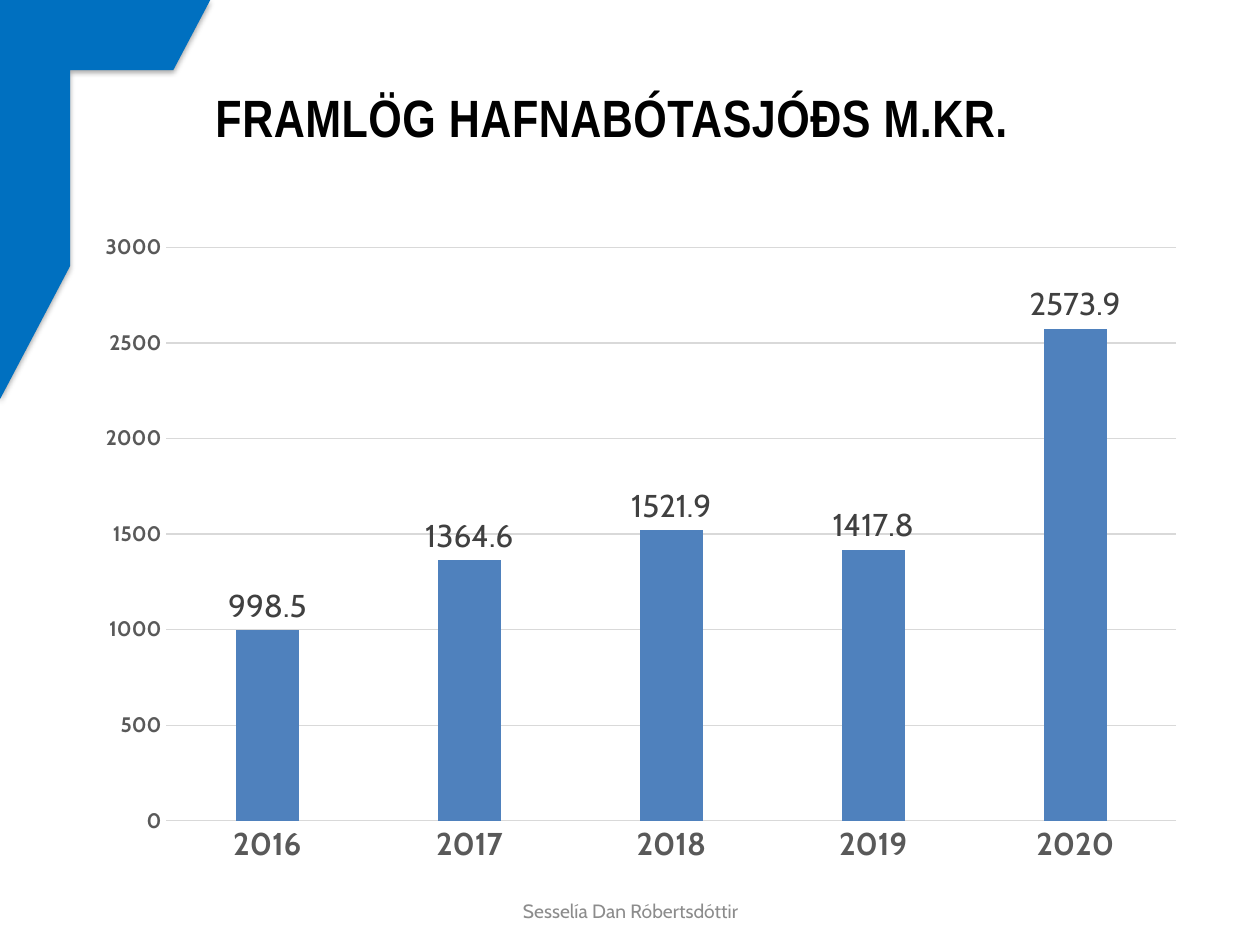
"""Build a slide with a column chart of yearly harbour fund contributions."""
import lxml.etree
import pptx
import pptx.chart.data
import pptx.dml.color
import pptx.enum.chart
import pptx.enum.shapes
import pptx.enum.text
import pptx.oxml.ns
import pptx.util

Cm = pptx.util.Cm
Pt = pptx.util.Pt
ALIGN = pptx.enum.text.PP_ALIGN


def colour(value):
    return pptx.dml.color.RGBColor.from_string(value)


def format_font(font, name, size, shade, bold=False):
    font.name = name
    font.size = Pt(size)
    font.bold = bold
    font.color.rgb = colour(shade)


def write_text(box, text, align=ALIGN.LEFT, spacing=0, space_after=0, **style):
    frame = box.text_frame
    frame.word_wrap = True
    frame.auto_size = pptx.enum.text.MSO_AUTO_SIZE.NONE
    frame.vertical_anchor = pptx.enum.text.MSO_ANCHOR.MIDDLE
    para = frame.paragraphs[0]
    para.alignment = align
    para.space_after = Pt(space_after)
    span = para.add_run()
    span.text = text
    format_font(span.font, **style)
    if spacing:
        span.font._element.set("spc", str(round(spacing * 100)))


class SlideBuilder:
    heading_font = "Arial Narrow"
    body_font = "Cabin"
    frame_fill = "0070C0"
    bar_fill = "4F81BD"
    grid_line = "D9D9D9"
    axis_text = "595959"

    def __init__(self, deck):
        self.page = deck.slides.add_slide(deck.slide_layouts[5])

    def corner(self, width, height):
        shape = self.page.shapes.add_shape(
            pptx.enum.shapes.MSO_SHAPE.HALF_FRAME, 0, 0, Cm(width), Cm(height))
        shape.fill.solid()
        shape.fill.fore_color.rgb = colour(self.frame_fill)
        shape.line.fill.background()
        shape.shadow.inherit = False
        effects = shape._element.spPr.find(pptx.oxml.ns.qn("a:effectLst"))
        shadow = lxml.etree.SubElement(
            effects, pptx.oxml.ns.qn("a:outerShdw"), blurRad=str(Pt(3.1)),
            dist=str(Pt(1.8)), dir="5400000", rotWithShape="0")
        shade = lxml.etree.SubElement(shadow, pptx.oxml.ns.qn("a:srgbClr"), val="000000")
        lxml.etree.SubElement(shade, pptx.oxml.ns.qn("a:alpha"), val="35000")

    def title(self, text, left, top, width, height):
        box = self.page.shapes.title
        box.left, box.top, box.width, box.height = map(Cm, (left, top, width, height))
        write_text(box, text, spacing=0.3, name=self.heading_font, size=30,
                   shade="000000", bold=True)

    def credit(self, text, left, top, width, height):
        box = self.page.shapes.add_textbox(*map(Cm, (left, top, width, height)))
        write_text(box, text, align=ALIGN.CENTER, space_after=6,
                   name=self.body_font, size=11, shade="8C8C8C")

    def axis(self, axis, size):
        axis.major_tick_mark = pptx.enum.chart.XL_TICK_MARK.NONE
        axis.minor_tick_mark = pptx.enum.chart.XL_TICK_MARK.NONE
        format_font(axis.tick_labels.font, self.body_font, size, self.axis_text, True)

    def rule(self, line):
        line.color.rgb = colour(self.grid_line)
        line.width = Pt(0.75)

    def column_chart(self, values, left, top, width, height):
        data = pptx.chart.data.CategoryChartData()
        data.categories = list(values)
        data.add_series("Series 1", values.values())
        chart = self.page.shapes.add_chart(
            pptx.enum.chart.XL_CHART_TYPE.COLUMN_CLUSTERED,
            *map(Cm, (left, top, width, height)), data).chart
        chart.has_title = False
        chart.has_legend = False
        format_font(chart.font, self.body_font, 10, "000000")

        self.axis(chart.category_axis, 18)
        self.rule(chart.category_axis.format.line)
        self.axis(chart.value_axis, 12)
        chart.value_axis.format.line.fill.background()
        self.rule(chart.value_axis.major_gridlines.format.line)

        plot = chart.plots[0]
        plot.vary_by_categories = False
        plot.gap_width = 219
        plot.overlap = -27
        bars = plot.series[0]
        bars.format.fill.solid()
        bars.format.fill.fore_color.rgb = colour(self.bar_fill)
        labels = bars.data_labels
        labels.show_value = True
        labels.position = pptx.enum.chart.XL_LABEL_POSITION.OUTSIDE_END
        format_font(labels.font, self.body_font, 18, "404040")


def main():
    deck = pptx.Presentation()
    deck.slide_width, deck.slide_height = Cm(25.4), Cm(19.05)
    slide = SlideBuilder(deck)
    slide.corner(4.24, 8.05)
    slide.title("FRAMLÖG HAFNABÓTASJÓÐS M.KR.", 4.09, 0.76, 20.5, 3.18)
    slide.credit("Sesselía Dan Róbertsdóttir", 8.69, 17.96, 8.05, 0.81)
    contributions = {"2016": 998.5, "2017": 1364.6, "2018": 1521.9,
                     "2019": 1417.8, "2020": 2573.9}
    slide.column_chart(contributions, 1.68, 4.47, 22.48, 13.21)
    deck.save("out.pptx")


if __name__ == "__main__":
    main()
